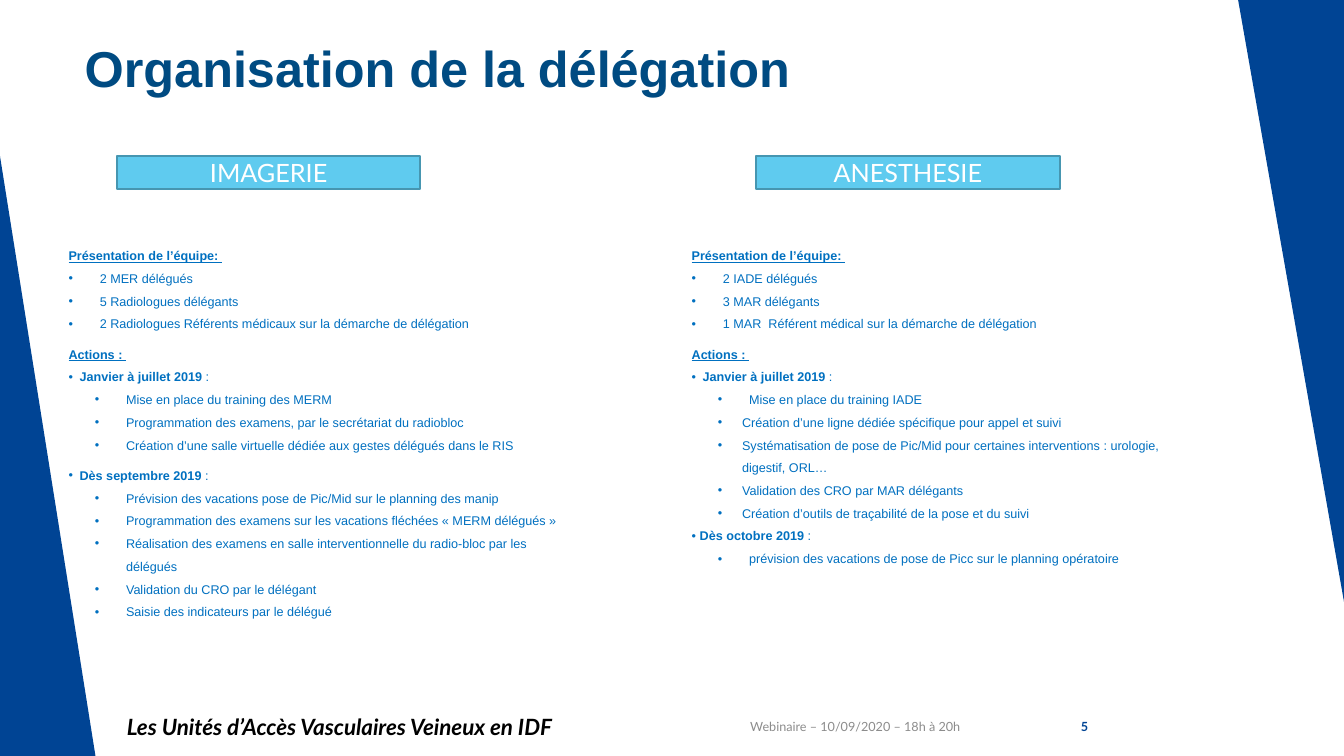
from lxml import etree
from pptx import Presentation
from pptx import util as u
from pptx.dml.color import RGBColor
from pptx.enum import shapes, text
from pptx.oxml.ns import qn

W, H = 13.33, 7.5
TITLE = "Organisation de la délégation"
BLUE, BODY = "004494", "0070C0"

# kind: (level, text indent, bullet position, line spacing, space before)
STYLES = {
    "head": (0, 0, None, 1, 0),
    "next": (0, 0, None, 1, 10.8),
    "team": (0, 0.31, 0, 1.5, 0),
    "date": (0, 0.11, 0, 1.5, 0),
    "late": (0, 0.11, 0, 2, 0),
    "tight": (0, 0.08, 0, 1.5, 0),
    "step": (1, 0.57, 0.26, 1.5, 0),
    "near": (1, 0.5, 0.26, 1.5, 0),
}
COLUMNS = [
    ("IMAGERIE", 0.58, 1.16, 3.78, [
        ("head", ["Présentation de l’équipe: "]),
        ("team", ["2 MER délégués",
                  "5 Radiologues délégants",
                  "2 Radiologues Référents médicaux sur la démarche de délégation"]),
        ("next", ["Actions : "]),
        ("date", ["Janvier à juillet 2019 :"]),
        ("step", ["Mise en place du training des MERM",
                  "Programmation des examens, par le secrétariat du radiobloc",
                  "Création d’une salle virtuelle dédiée aux gestes délégués dans le RIS"]),
        ("late", ["Dès septembre 2019 :"]),
        ("step", ["Prévision des vacations pose de Pic/Mid sur le planning des manip",
                  "Programmation des examens sur les vacations fléchées « MERM délégués »",
                  "Réalisation des examens en salle interventionnelle du radio-bloc par les délégués",
                  "Validation du CRO par le délégant",
                  "Saisie des indicateurs par le délégué"]),
    ]),
    ("ANESTHESIE", 6.76, 7.5, 3.28, [
        ("head", ["Présentation de l’équipe: "]),
        ("team", ["2 IADE délégués",
                  "3 MAR délégants",
                  "1 MAR  Référent médical sur la démarche de délégation"]),
        ("next", ["Actions : "]),
        ("date", ["Janvier à juillet 2019 :"]),
        ("step", ["Mise en place du training IADE"]),
        ("near", ["Création d’une ligne dédiée spécifique pour appel et suivi",
                  "Systématisation de pose de Pic/Mid pour certaines interventions : urologie, digestif, ORL…",
                  "Validation des CRO par MAR délégants",
                  "Création d’outils de traçabilité de la pose et du suivi"]),
        ("tight", ["Dès octobre 2019 :"]),
        ("step", ["prévision des vacations de pose de Picc sur le planning opératoire"]),
    ]),
]
FOOTER = [
    ("Les Unités d’Accès Vasculaires Veineux en IDF", 1.16, 5.35, 16, "000000", True, True, "LEFT"),
    ("Webinaire – 10/09/2020 – 18h à 20h", 7.02, 2.6, 9, "8C8C8C", False, False, "RIGHT"),
    ("5", 10.14, 0.75, 9, BLUE, True, False, "RIGHT"),
]
TRIANGLES = [(0, 1.55, 0.95, 0), (12.28, 0, 1.05, 180)]


def rgb(value):
    return RGBColor.from_string(value)


def place(sp, *box):
    sp.left, sp.top, sp.width, sp.height = map(u.Inches, box)


def style(font, name, size, color, bold=False, italic=False):
    font.name, font.size, font.bold, font.italic = name, u.Pt(size), bold, italic
    font.color.rgb = rgb(color)


def add_shape(s, kind, box, fill):
    sp = s.shapes.add_shape(kind, *map(u.Inches, box))
    sp.shadow.inherit = False
    sp.fill.solid()
    sp.fill.fore_color.rgb = rgb(fill)
    sp.line.fill.background()
    return sp


def write(sp, words, align, *look):
    tf = sp.text_frame
    tf.word_wrap = True
    tf.auto_size = text.MSO_AUTO_SIZE.NONE
    tf.vertical_anchor = text.MSO_ANCHOR.MIDDLE
    tf.text = words
    p = tf.paragraphs[0]
    p.alignment = getattr(text.PP_ALIGN, align)
    style(p.runs[0].font, *look)


def write_item(p, kind, words):
    level, indent, bullet, spacing, before = STYLES[kind]
    p.level = level
    pPr = p._p.get_or_add_pPr()
    pPr.set("marL", str(u.Inches(indent)))
    pPr.set("indent", str(u.Inches((bullet or 0) - indent)))
    if bullet is None:
        etree.SubElement(pPr, qn("a:buNone"))
    else:
        etree.SubElement(pPr, qn("a:buFont")).set("typeface", "Arial")
        etree.SubElement(pPr, qn("a:buChar")).set("char", "•")
    p.alignment = text.PP_ALIGN.LEFT
    p.line_spacing = float(spacing)
    p.space_before, p.space_after = u.Pt(before), u.Pt(0)
    heading = kind in ("head", "next")
    dated = kind in ("date", "late", "tight")
    for part in [words[:-1], words[-1]] if dated else [words]:
        r = p.add_run()
        r.text = part
        style(r.font, "Arial", 9, BODY, heading or (dated and part != ":"))
        r.font.underline = heading


def main():
    prs = Presentation()
    prs.slide_width, prs.slide_height = u.Inches(W), u.Inches(H)
    s = prs.slides.add_slide(prs.slide_layouts[3])
    title, *bodies = s.placeholders

    for left, top, width, turn in TRIANGLES:
        sp = add_shape(s, shapes.MSO_SHAPE.RIGHT_TRIANGLE, (left, top, width, 5.97), BLUE)
        sp.rotation = turn

    place(title, 0.74, 0.31, 9.4, 0.72)
    write(title, TITLE, "LEFT", "Arial", 36, "004B82", True)

    for body, (label, left, label_left, height, groups) in zip(bodies, COLUMNS):
        place(body, left, 2.41, 5.14, height)
        tf = body.text_frame
        tf.word_wrap = True
        tf.auto_size = text.MSO_AUTO_SIZE.NONE
        items = [(kind, words) for kind, lines in groups for words in lines]
        for i, (kind, words) in enumerate(items):
            write_item(tf.add_paragraph() if i else tf.paragraphs[0], kind, words)
        sp = add_shape(s, shapes.MSO_SHAPE.RECTANGLE, (label_left, 1.55, 3.01, 0.33), "5FCBEF")
        sp.line.color.rgb = rgb("4696B1")
        sp.line.width = u.Pt(1.5)
        write(sp, label, "CENTER", "Lato", 18, "FFFFFF")

    for words, left, width, size, color, bold, italic, align in FOOTER:
        sp = s.shapes.add_textbox(*map(u.Inches, (left, 7.01, width, 0.4)))
        write(sp, words, align, "Lato", size, color, bold, italic)

    prs.save("out.pptx")


if __name__ == "__main__":
    main()
